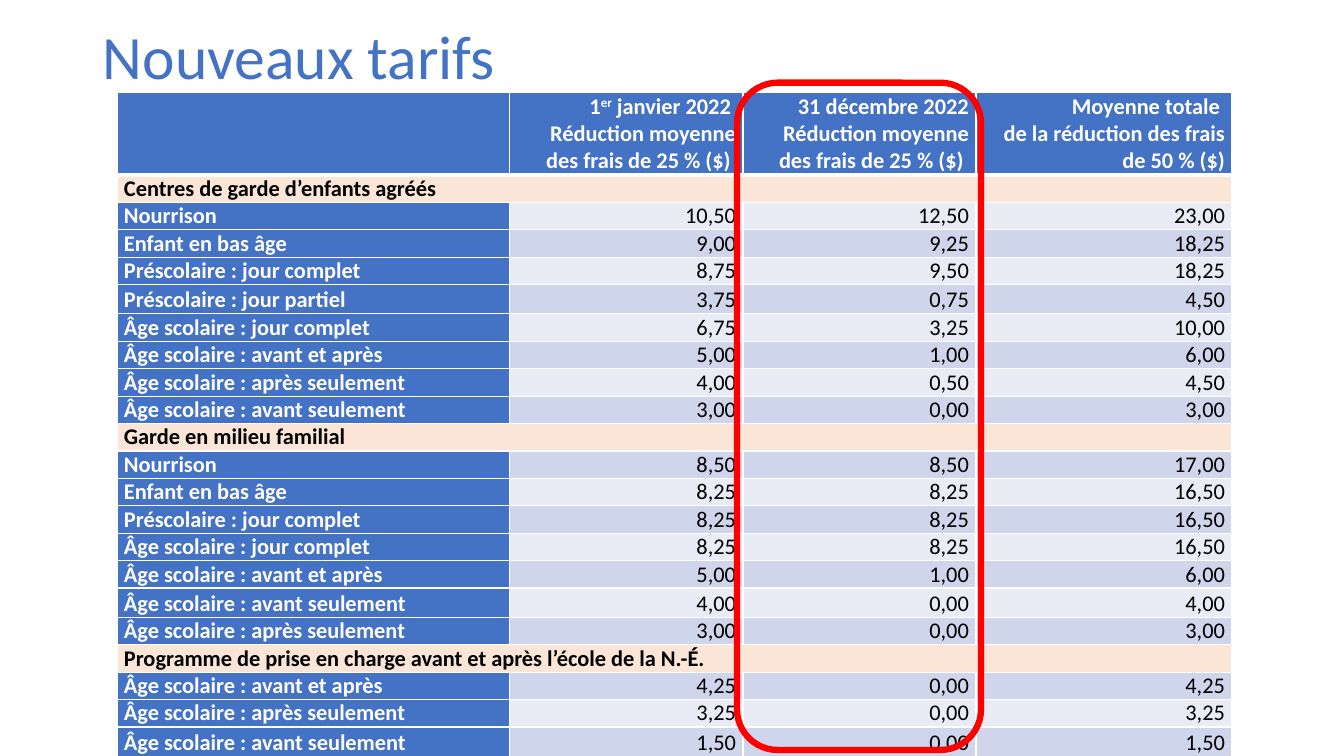
from lxml import etree
from pptx import Presentation
from pptx.dml.color import RGBColor
from pptx.enum import shapes, text
from pptx.oxml import ns
from pptx.util import Inches, Pt

BLUE, WHITE, BLACK, PEACH = "4472C4", "FFFFFF", "000000", "FBE5D6"
BANDS = ["E9EBF5", "CFD5EA"]


def color(value):
    return RGBColor.from_string(value)


def add_borders(cell, widths):
    tcPr = cell._tc.get_or_add_tcPr()
    for i, (side, width) in enumerate(zip("LRTB", widths)):
        ln = etree.Element(ns.qn("a:ln" + side), w=str(Pt(width)))
        fill = etree.SubElement(ln, ns.qn("a:solidFill"))
        etree.SubElement(fill, ns.qn("a:srgbClr"), val=WHITE)
        tcPr.insert(i, ln)


header = [
    "",
    "1er janvier 2022 \nRéduction moyenne des frais de 25 % ($) ",
    "31 décembre 2022 Réduction moyenne des frais de 25 % ($) ",
    "Moyenne totale \nde la réduction des frais de 50 % ($)",
]
rows = [
    header,
    ["Centres de garde d’enfants agréés"],
    ["Nourrison", "10,50", "12,50", "23,00"],
    ["Enfant en bas âge", "9,00", "9,25", "18,25"],
    ["Préscolaire : jour complet", "8,75", "9,50", "18,25"],
    ["Préscolaire : jour partiel", "3,75", "0,75", "4,50"],
    ["Âge scolaire : jour complet", "6,75", "3,25", "10,00"],
    ["Âge scolaire : avant et après", "5,00", "1,00", "6,00"],
    ["Âge scolaire : après seulement", "4,00", "0,50", "4,50"],
    ["Âge scolaire : avant seulement", "3,00", "0,00", "3,00"],
    ["Garde en milieu familial"],
    ["Nourrison", "8,50", "8,50", "17,00"],
    ["Enfant en bas âge", "8,25", "8,25", "16,50"],
    ["Préscolaire : jour complet", "8,25", "8,25", "16,50"],
    ["Âge scolaire : jour complet", "8,25", "8,25", "16,50"],
    ["Âge scolaire : avant et après", "5,00", "1,00", "6,00"],
    ["Âge scolaire : avant seulement", "4,00", "0,00", "4,00"],
    ["Âge scolaire : après seulement", "3,00", "0,00", "3,00"],
    ["Programme de prise en charge avant et après l’école de la N.-É."],
    ["Âge scolaire : avant et après", "4,25", "0,00", "4,25"],
    ["Âge scolaire : après seulement", "3,25", "0,00", "3,25"],
    ["Âge scolaire : avant seulement", "1,50", "0,00", "1,50"],
]
col_widths = [3.89, 2.32, 2.31, 2.54]
row_heights = [0.56, 0.27, 0.27, 0.27, 0.25, 0.29, 0.27, 0.25, 0.22, 0.24, 0.25,
               0.25, 0.25, 0.25, 0.25, 0.25, 0.29, 0.22, 0.22, 0.22, 0.27, 0.29]

prs = Presentation()
prs.slide_width, prs.slide_height = Inches(13.33), Inches(7.5)
s = prs.slides.add_slide(prs.slide_layouts[5])

title = s.shapes.title
title.left, title.top = Inches(0.92), Inches(0.2)
title.width, title.height = Inches(11.5), Inches(0.78)
tf = title.text_frame
tf.text = "Nouveaux tarifs"
tf.vertical_anchor = text.MSO_ANCHOR.MIDDLE
p = tf.paragraphs[0]
p.alignment = text.PP_ALIGN.LEFT
p.line_spacing = 0.9
r = p.runs[0]
r.font.size, r.font.name = Pt(44), "Calibri"
r.font.color.rgb = color(BLUE)

table = s.shapes.add_table(len(rows), len(col_widths), Inches(1.16), Inches(0.92),
                           Inches(11.06), Inches(6.49)).table
for col, width in zip(table.columns, col_widths):
    col.width = Inches(width)
for row, height in zip(table.rows, row_heights):
    row.height = Inches(height)

for i, values in enumerate(rows):
    is_section = len(values) == 1
    if is_section:
        table.cell(i, 0).merge(table.cell(i, 3))
    for j in range(len(col_widths)):
        cell = table.cell(i, j)
        is_label = i == 0 or j == 0
        fill = PEACH if is_section else BLUE if is_label else BANDS[i % 2]
        cell.fill.solid()
        cell.fill.fore_color.rgb = color(fill)
        add_borders(cell, [1, 1, 3 if i == 1 else 1, 3 if i == 0 else 1])
        cell.margin_left = cell.margin_right = Inches(0.07)
        cell.margin_top = cell.margin_bottom = 0
        cell.vertical_anchor = text.MSO_ANCHOR.BOTTOM
        if j >= len(values):
            continue
        cell.text_frame.text = values[j]
        for p in cell.text_frame.paragraphs:
            p.alignment = text.PP_ALIGN.RIGHT if j else text.PP_ALIGN.LEFT
            if p.text.startswith("1er"):
                ending = p.text[3:]
                p.text = "1"
                p.add_run().text = "er"
                p.add_run().text = ending
                p.runs[1]._r.get_or_add_rPr().set("baseline", "30000")
            for r in p.runs:
                r.font.size, r.font.name = Pt(16), "Calibri"
                r.font.bold = is_label
                r.font.color.rgb = color(WHITE if fill == BLUE else BLACK)

highlight = s.shapes.add_shape(shapes.MSO_SHAPE.ROUNDED_RECTANGLE, Inches(7.31),
                               Inches(0.82), Inches(2.42), Inches(6.62))
highlight.shadow.inherit = False
highlight.fill.background()
highlight.line.color.rgb = color("FF0000")
highlight.line.width = Pt(4.5)

prs.save("out.pptx")
